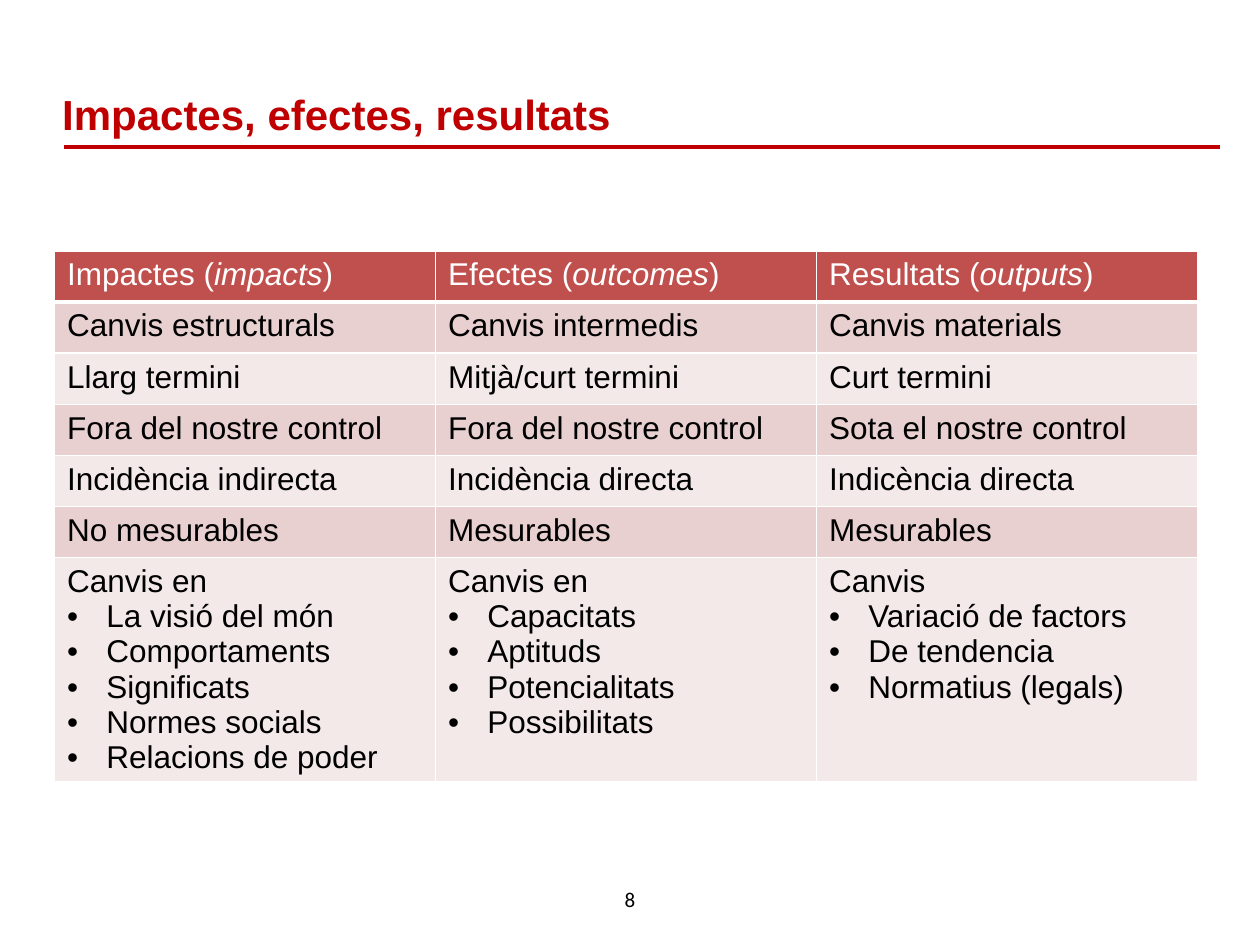
from lxml import etree
from pptx import Presentation
from pptx import util as u
from pptx.dml.color import RGBColor
from pptx.enum import shapes, text
from pptx.oxml.ns import qn

RED, HEADER, DARK, LIGHT = "C00000", "C0504D", "E8D0D0", "F4E9E9"
WHITE, BLACK = "FFFFFF", "000000"

HEADINGS = [("Impactes", "impacts"), ("Efectes", "outcomes"), ("Resultats", "outputs")]
ROWS = [
    ("Canvis estructurals", "Canvis intermedis", "Canvis materials"),
    ("Llarg termini", "Mitjà/curt termini", "Curt termini"),
    ("Fora del nostre control", "Fora del nostre control", "Sota el nostre control"),
    ("Incidència indirecta", "Incidència directa", "Indicència directa"),
    ("No mesurables", "Mesurables", "Mesurables"),
]
CHANGES = [
    ("Canvis en", ["La visió del món", "Comportaments", "Significats",
                   "Normes socials", "Relacions de poder"]),
    ("Canvis en", ["Capacitats", "Aptituds", "Potencialitats", "Possibilitats"]),
    ("Canvis", ["Variació de factors", "De tendencia", "Normatius (legals)"]),
]


def color(value):
    return RGBColor.from_string(value)


def write(para, words, size=18, font="Arial", fill=BLACK, bold=False, italic=False):
    span = para.add_run()
    span.text = words
    span.font.size = u.Pt(size)
    span.font.name = font
    span.font.bold = bold
    span.font.italic = italic
    span.font.color.rgb = color(fill)


def add_bullet(para):
    props = para._p.get_or_add_pPr()
    props.set("marL", str(u.Cm(0.79)))
    props.set("indent", str(-u.Cm(0.79)))
    etree.SubElement(props, qn("a:buFont"), typeface="Arial")
    etree.SubElement(props, qn("a:buChar"), char="•")


def style_cell(cell, fill, bottom=1):
    props = cell._tc.get_or_add_tcPr()
    for side, width in (("L", 1), ("R", 1), ("T", 1), ("B", bottom)):
        border = etree.SubElement(props, qn(f"a:ln{side}"), w=str(u.Pt(width)))
        solid = etree.SubElement(border, qn("a:solidFill"))
        etree.SubElement(solid, qn("a:srgbClr"), val=WHITE)
    cell.fill.solid()
    cell.fill.fore_color.rgb = color(fill)


def add_heading(page, left, top, width, height):
    title = page.shapes.title
    title.left, title.top = u.Cm(left), u.Cm(top)
    title.width, title.height = u.Cm(width), u.Cm(height)
    frame = title.text_frame
    frame.vertical_anchor = text.MSO_ANCHOR.MIDDLE
    frame.paragraphs[0].alignment = text.PP_ALIGN.LEFT
    write(frame.paragraphs[0], "Impactes, efectes, resultats", size=24, fill=RED, bold=True)

    y = u.Cm(top + height - 0.03)
    rule = page.shapes.add_connector(
        shapes.MSO_CONNECTOR.STRAIGHT, u.Cm(left + 0.3), y, u.Cm(left + width - 0.2), y)
    rule.line.color.rgb = color(RED)
    rule.line.width = u.Pt(2.25)
    etree.SubElement(rule._element.spPr, qn("a:effectLst"))


def add_comparison(page, left, top, width, height):
    row_height = 1.03
    count = len(ROWS) + 2
    table = page.shapes.add_table(
        count, len(HEADINGS), u.Cm(left), u.Cm(top), u.Cm(width), u.Cm(height)).table
    for column in table.columns:
        column.width = u.Cm(width / len(HEADINGS))
    for row in table.rows:
        row.height = u.Cm(row_height)
    table.rows[count - 1].height = u.Cm(height - row_height * (count - 1))

    for col, (name, term) in enumerate(HEADINGS):
        cell = table.cell(0, col)
        style_cell(cell, HEADER, bottom=3)
        para = cell.text_frame.paragraphs[0]
        write(para, f"{name} (", fill=WHITE)
        write(para, term, fill=WHITE, italic=True)
        write(para, ")", fill=WHITE)

    body = [[(words, []) for words in row] for row in ROWS] + [CHANGES]
    for index, row in enumerate(body, start=1):
        for col, (words, items) in enumerate(row):
            cell = table.cell(index, col)
            style_cell(cell, DARK if index % 2 else LIGHT)
            write(cell.text_frame.paragraphs[0], words)
            for item in items:
                para = cell.text_frame.add_paragraph()
                add_bullet(para)
                write(para, item)


def add_page_number(page, left, top, width, height):
    box = page.shapes.add_textbox(u.Cm(left), u.Cm(top), u.Cm(width), u.Cm(height))
    box.text_frame.word_wrap = True
    para = box.text_frame.paragraphs[0]
    para.alignment = text.PP_ALIGN.CENTER
    write(para, "8", size=12, font="Calibri")


def main():
    deck = Presentation()
    deck.slide_width, deck.slide_height = u.Cm(25.4), u.Cm(19.05)
    page = deck.slides.add_slide(deck.slide_layouts.get_by_name("Title Only"))
    add_heading(page, 1, 1.6, 23.8, 1.4)
    add_comparison(page, 1.1, 5.06, 23.04, 10.7)
    add_page_number(page, 12, 17.75, 1.4, 1.02)
    deck.save("out.pptx")


if __name__ == "__main__":
    main()
